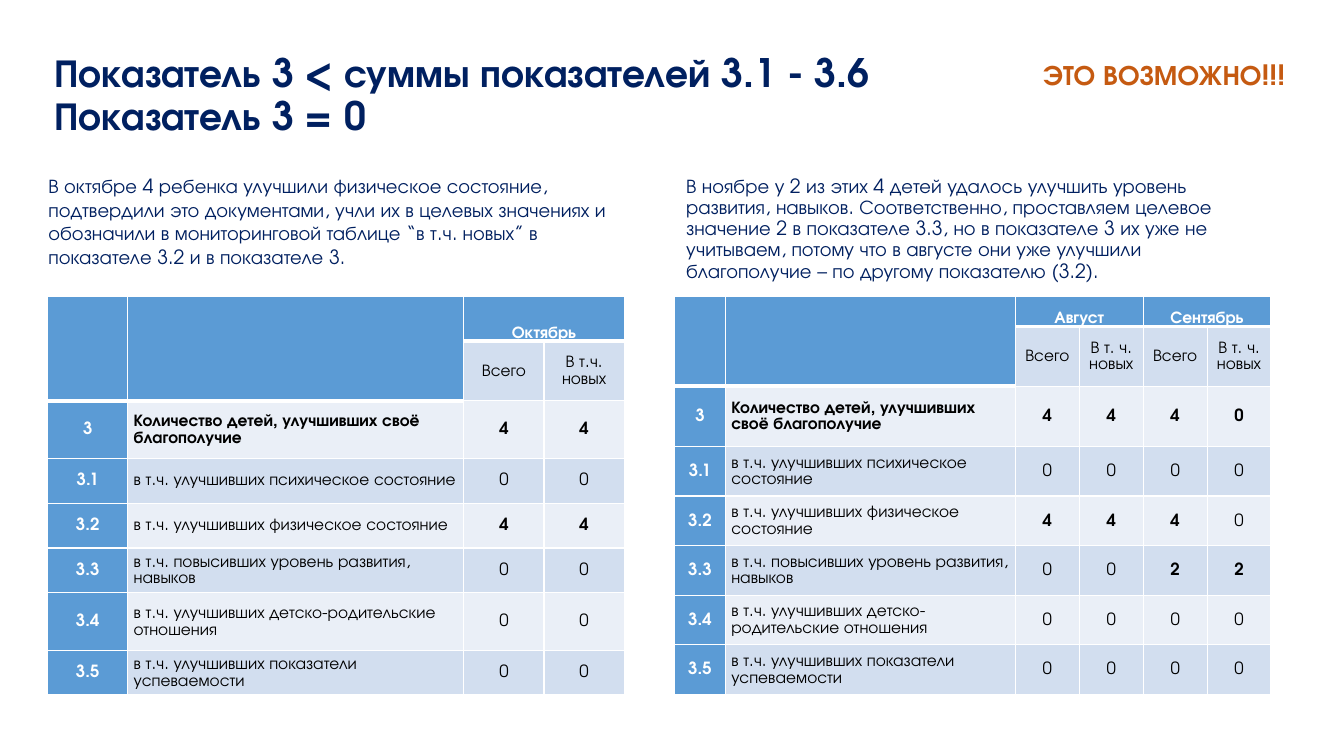
from lxml.etree import SubElement as Sub
from pptx import Presentation
from pptx.dml.color import RGBColor as Rgb
from pptx.enum.text import MSO_ANCHOR as Anchor, MSO_AUTO_SIZE as Fit, PP_ALIGN as Align
from pptx.oxml.ns import qn
from pptx.util import Cm, Pt

FACE = "TeX Gyre Adventor"
HUES = {"navy": "002060", "rust": "C55A11", "blue": "5B9BD5", "mid": "D2DEEF",
        "pale": "EAEFF7", "white": "FFFFFF", "black": "000000"}
NAMES = [
    ("3", "Количество детей, улучшивших своё благополучие"),
    ("3.1", "в т.ч. улучшивших психическое состояние"),
    ("3.2", "в т.ч. улучшивших физическое состояние"),
    ("3.3", "в т.ч. повысивших уровень развития, навыков"),
    ("3.4", "в т.ч. улучшивших детско-родительские отношения"),
    ("3.5", "в т.ч. улучшивших показатели успеваемости"),
]
LEFT = ("В октябре 4 ребенка улучшили физическое состояние, подтвердили это "
        "документами, учли их в целевых значениях и обозначили в мониторинговой "
        "таблице “в т.ч. новых” в показателе 3.2 и в показателе 3.")
RIGHT = ("В ноябре у 2 из этих 4 детей удалось улучшить уровень развития, навыков. "
         "Соответственно, проставляем целевое значение 2 в показателе 3.3, но в "
         "показателе 3 их уже не учитываем, потому что в августе они уже улучшили "
         "благополучие – по другому показателю (3.2).")


def write(frame, text, size, hue, bold=False, align=Align.LEFT, lead=1.0):
    """Put one formatted paragraph into a text frame."""
    frame.text = text
    for para in frame.paragraphs:
        para.alignment = align
        para.line_spacing = lead
        font = para.font
        font.name, font.size, font.bold = FACE, Pt(size), bold
        font.color.rgb = Rgb.from_string(HUES[hue])


def add_note(slide, box, text, lead):
    """Add a wrapped explanation that sits on the bottom of its box."""
    frame = slide.shapes.add_textbox(*map(Cm, box)).text_frame
    frame.word_wrap = True
    frame.vertical_anchor = Anchor.BOTTOM
    write(frame, text, 14, "navy", lead=lead)


def add_title(slide, text):
    """Move and format the title placeholder."""
    title = slide.shapes.title
    title.left, title.top, title.width, title.height = map(Cm, (1.12, 1.12, 29.21, 2.62))
    frame = title.text_frame
    frame.auto_size = Fit.NONE
    frame.vertical_anchor = Anchor.MIDDLE
    write(frame, text, 28, "navy", bold=True, lead=0.9)


def add_tag(slide, text):
    """Add the one-line remark at the top right."""
    frame = slide.shapes.add_textbox(Cm(26.04), Cm(1.32), Cm(7.14), Cm(1.12)).text_frame
    frame.word_wrap = False
    frame.auto_size = Fit.SHAPE_TO_FIT_TEXT
    write(frame, text, 20, "rust", bold=True)


def edge(cell, base):
    """Draw white cell borders with the given bottom width."""
    props = cell._tc.get_or_add_tcPr()
    for side, width in (("L", 1), ("R", 1), ("T", 1), ("B", base)):
        line = Sub(props, qn(f"a:ln{side}"), w=str(Pt(width)))
        Sub(Sub(line, qn("a:solidFill")), qn("a:srgbClr"), val=HUES["white"])


def dress(cell, text, fill, hue="black", bold=False, align=Align.CENTER,
          anchor=Anchor.MIDDLE, base=1):
    """Fill, frame and write one table cell."""
    edge(cell, base)
    cell.fill.solid()
    cell.fill.fore_color.rgb = Rgb.from_string(HUES[fill])
    cell.margin_left = cell.margin_right = Cm(0.15)
    cell.margin_top = cell.margin_bottom = 0
    cell.vertical_anchor = anchor
    write(cell.text_frame, text, 12, hue, bold, align, 1.07)


def add_head(table, months, fresh):
    """Build the two header rows, with a pair of columns for each month."""
    for col in range(2):
        for row in range(2):
            dress(table.cell(row, col), "", "blue", base=3)
        table.cell(0, col).merge(table.cell(1, col))
    for num, month in enumerate(months):
        col = 2 + 2 * num
        for step, label in enumerate(("Всего", fresh)):
            dress(table.cell(0, col + step), "" if step else month, "blue", "white",
                  True, anchor=Anchor.BOTTOM, base=3)
            dress(table.cell(1, col + step), label, "mid")
        table.cell(0, col).merge(table.cell(0, col + 1))


def add_grid(slide, left, cols, rows, months, fresh, data):
    """Add a table of indicators by month."""
    frame = slide.shapes.add_table(len(rows), len(cols), Cm(left), Cm(7.47),
                                   Cm(sum(cols)), Cm(sum(rows)))
    table = frame.table
    table.first_row = table.horz_banding = False
    for col, width in zip(table.columns, cols):
        col.width = Cm(width)
    for row, height in zip(table.rows, rows):
        row.height = Cm(height)
    add_head(table, months, fresh)
    for num, ((code, name), vals) in enumerate(zip(NAMES, data)):
        row, total = num + 2, num == 0
        fill = "mid" if num % 2 else "pale"
        dress(table.cell(row, 0), code, "blue", "white", True)
        dress(table.cell(row, 1), name, fill, bold=total, align=Align.LEFT)
        for col, val in enumerate(vals, 2):
            dress(table.cell(row, col), str(val), fill, bold=total or val > 0)


def main():
    """Build the slide and save it."""
    deck = Presentation()
    deck.slide_width, deck.slide_height = Cm(33.87), Cm(19.05)
    slide = deck.slides.add_slide(deck.slide_layouts[5])
    add_title(slide, "Показатель 3 < суммы показателей 3.1 - 3.6\vПоказатель 3 = 0")
    add_note(slide, (0.97, 4.27, 14.76, 2.62), LEFT, 1.0)
    add_grid(slide, 1.2, [2.02, 8.47, 2.02, 2.02],
             [1.13, 1.5, 1.45, 1.13, 1.13, 1.13, 1.45, 1.13],
             ["Октябрь"], "В т.ч. новых",
             [(4, 4), (0, 0), (4, 4), (0, 0), (0, 0), (0, 0)])
    add_note(slide, (17.04, 4.27, 14.99, 2.97), RIGHT, 0.9)
    add_grid(slide, 17, [1.28, 7.31] + [1.61] * 4, [0.76, 1.5, 1.52] + [1.25] * 5,
             ["Август", "Сентябрь"], "В т. ч. новых",
             [(4, 4, 4, 0), (0, 0, 0, 0), (4, 4, 4, 0),
              (0, 0, 2, 2), (0, 0, 0, 0), (0, 0, 0, 0)])
    add_tag(slide, "ЭТО ВОЗМОЖНО!!!")
    deck.save("out.pptx")


if __name__ == "__main__":
    main()
